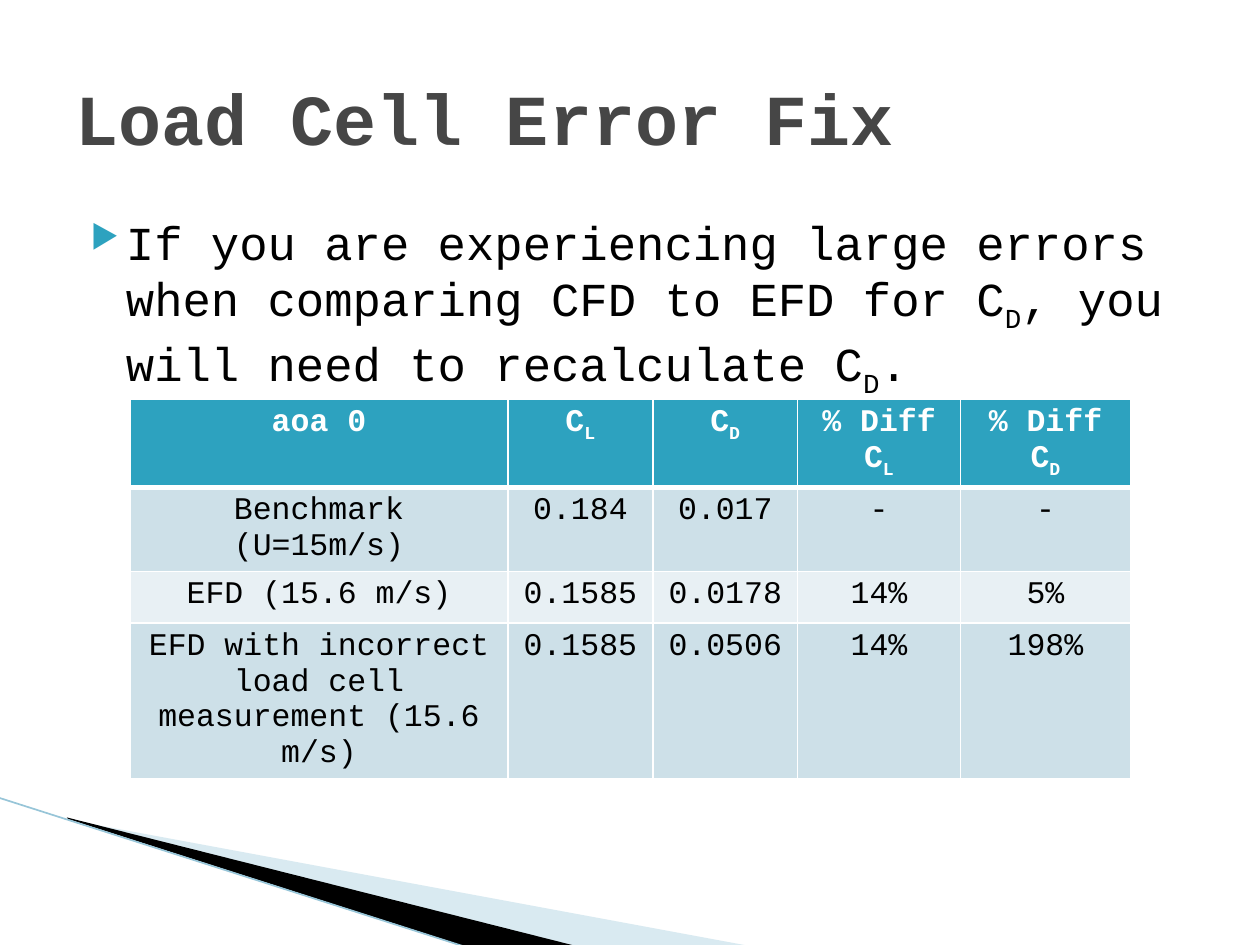
from dataclasses import dataclass

from lxml.etree import SubElement
from pptx import Presentation
from pptx.dml.color import RGBColor
from pptx.enum.shapes import MSO_CONNECTOR
from pptx.enum.text import MSO_ANCHOR, PP_ALIGN
from pptx.oxml.ns import qn
from pptx.util import Cm, Pt


@dataclass(frozen=True)
class Theme:
    font: str = "Courier New"
    title_size: int = 41
    body_size: int = 27
    table_size: int = 18
    title: str = "464646"
    text: str = "000000"
    white: str = "FFFFFF"
    accent: str = "2DA2BF"
    band_dark: str = "CDE0E8"
    band_light: str = "E8F0F4"
    wedge: str = "A0CBDC"
    edge: str = "97C5D8"


THEME = Theme()

TITLE = "Load Cell Error Fix"
ADVICE = ("If you are experiencing large errors when comparing CFD to EFD for C_D, "
          "you will need to recalculate C_D.")
# An underscore lowers the letter after it
RESULTS = [
    ["aoa 0", "C_L", "C_D", "% Diff C_L", "% Diff C_D"],
    ["Benchmark (U=15m/s)", "0.184", "0.017", "-", "-"],
    ["EFD (15.6 m/s)", "0.1585", "0.0178", "14%", "5%"],
    ["EFD with incorrect load cell measurement (15.6 m/s)",
     "0.1585", "0.0506", "14%", "198%"],
]
COLUMN_WIDTHS = [7.62, 2.92, 2.92, 3.28, 3.43]
ROW_HEIGHT = 1.04


def rgb(code):
    return RGBColor.from_string(code)


def style(paragraph, size, color, bold=False):
    font = paragraph.font
    font.name = THEME.font
    font.size = Pt(size)
    font.bold = bold
    font.color.rgb = rgb(color)


def write(paragraph, text):
    """Add the text as runs, with each letter after an underscore as a subscript."""
    first, *rest = text.split("_")
    paragraph.add_run().text = first
    for part in rest:
        letter = paragraph.add_run()
        letter.text = part[0]
        letter._r.get_or_add_rPr().set("baseline", "-25000")
        if part[1:]:
            paragraph.add_run().text = part[1:]


def add_wedge(slide, points, color, opacity=100):
    corners = [(Cm(x), Cm(y)) for x, y in points]
    builder = slide.shapes.build_freeform(*corners[0])
    builder.add_line_segments(corners[1:], close=True)
    wedge = builder.convert_to_shape()
    wedge.shadow.inherit = False
    wedge.fill.solid()
    wedge.fill.fore_color.rgb = rgb(color)
    wedge.line.fill.background()
    if opacity < 100:
        tint = wedge.fill._xPr.find(".//" + qn("a:srgbClr"))
        SubElement(tint, qn("a:alpha"), val=str(opacity * 1000))


def add_edge(slide, start, end):
    edge = slide.shapes.add_connector(
        MSO_CONNECTOR.STRAIGHT, *map(Cm, start), *map(Cm, end))
    edge.line.color.rgb = rgb(THEME.edge)
    edge.line.width = Pt(0.95)
    SubElement(edge._element.spPr, qn("a:effectLst"))


def add_bullet(paragraph):
    properties = paragraph._p.get_or_add_pPr()
    properties.set("marL", str(Cm(1.02)))
    properties.set("indent", str(Cm(-0.71)))
    color = SubElement(properties, qn("a:buClr"))
    SubElement(color, qn("a:srgbClr"), val=THEME.accent)
    SubElement(properties, qn("a:buSzPct"), val="68000")
    SubElement(properties, qn("a:buChar"), char="▶")


def add_advice(slide):
    advice = slide.shapes.add_textbox(Cm(1.27), Cm(4.01), Cm(22.86), Cm(12.57))
    frame = advice.text_frame
    frame.word_wrap = True
    frame.margin_top = Cm(0.28)
    paragraph = frame.paragraphs[0]
    add_bullet(paragraph)
    write(paragraph, ADVICE)
    style(paragraph, THEME.body_size, THEME.text)


def format_title(slide):
    title = slide.shapes.title
    title.left, title.top = Cm(1.27), Cm(0.76)
    title.width, title.height = Cm(22.86), Cm(3.18)
    title.text_frame.vertical_anchor = MSO_ANCHOR.MIDDLE
    paragraph = title.text_frame.paragraphs[0]
    paragraph.text = TITLE
    paragraph.alignment = PP_ALIGN.LEFT
    style(paragraph, THEME.title_size, THEME.title, bold=True)
    return title


def set_borders(cell, bottom):
    properties = cell._tc.get_or_add_tcPr()
    widths = {"a:lnL": 1, "a:lnR": 1, "a:lnT": 1, "a:lnB": bottom}
    for position, (tag, width) in enumerate(widths.items()):
        border = SubElement(properties, qn(tag), w=str(Pt(width)))
        fill = SubElement(border, qn("a:solidFill"))
        SubElement(fill, qn("a:srgbClr"), val=THEME.white)
        properties.insert(position, border)


def add_results(slide):
    table = slide.shapes.add_table(
        len(RESULTS), len(COLUMN_WIDTHS), Cm(2.62), Cm(8.05),
        Cm(sum(COLUMN_WIDTHS)), Cm(ROW_HEIGHT * len(RESULTS))).table
    for column, width in zip(table.columns, COLUMN_WIDTHS):
        column.width = Cm(width)
    for r, values in enumerate(RESULTS):
        header = r == 0
        band = THEME.band_dark if r % 2 else THEME.band_light
        table.rows[r].height = Cm(ROW_HEIGHT)
        for c, value in enumerate(values):
            cell = table.cell(r, c)
            cell.fill.solid()
            cell.fill.fore_color.rgb = rgb(THEME.accent if header else band)
            set_borders(cell, bottom=3 if header else 1)
            paragraph = cell.text_frame.paragraphs[0]
            paragraph.alignment = PP_ALIGN.CENTER
            write(paragraph, value)
            style(paragraph, THEME.table_size,
                  THEME.white if header else THEME.text, bold=header)
        # The row under the header shares its thick border
        if r == 1:
            for cell in table.rows[r].cells:
                cell._tc.tcPr.find(qn("a:lnT")).set("w", str(Pt(3)))


def main():
    deck = Presentation()
    deck.slide_width, deck.slide_height = Cm(25.4), Cm(19.05)
    slide = deck.slides.add_slide(deck.slide_layouts[5])

    # Corner decoration
    add_wedge(slide, [(1.4, 16.53), (15.11, 19.07), (11.58, 19.07), (1.4, 16.51)],
              THEME.wedge, opacity=40)
    add_wedge(slide, [(1.35, 16.48), (11.61, 19.07), (9.45, 19.1), (1.37, 16.51)],
              THEME.text)
    add_edge(slide, (-0.03, 16.08), (9.42, 19.1))

    # Advice, with the title in front of the decoration
    add_advice(slide)
    title = format_title(slide)
    slide.shapes._spTree.append(title._element)

    # Load cell comparison
    add_results(slide)

    deck.save("out.pptx")


if __name__ == "__main__":
    main()
